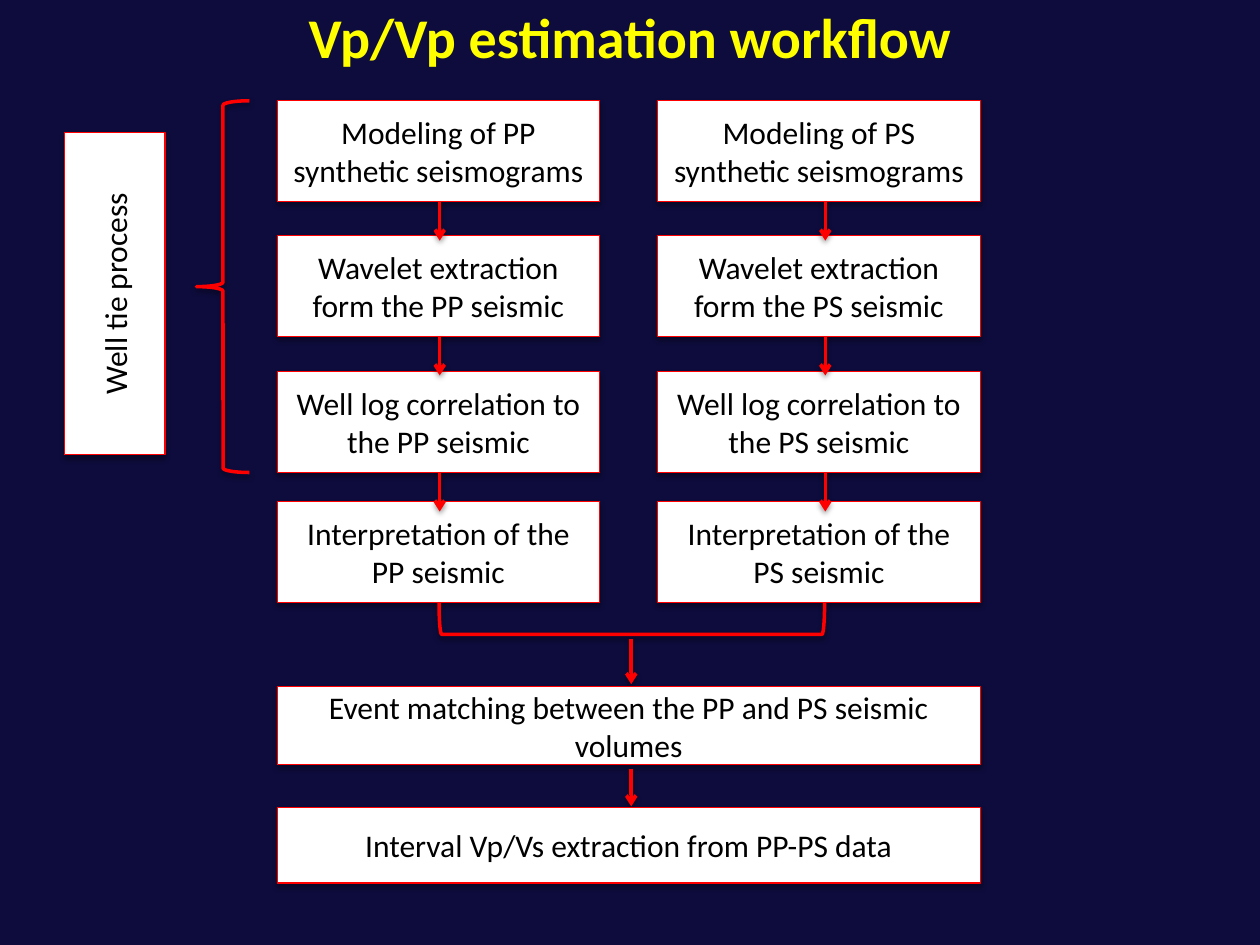
from lxml.etree import SubElement
from pptx import Presentation
from pptx.dml.color import RGBColor
from pptx.enum.shapes import MSO_CONNECTOR, MSO_SHAPE
from pptx.enum.text import MSO_ANCHOR, PP_ALIGN
from pptx.oxml.ns import qn
from pptx.util import Inches, Pt

NAVY = RGBColor(0x0E, 0x0C, 0x3C)
WHITE = RGBColor(0xFF, 0xFF, 0xFF)
BLACK = RGBColor(0, 0, 0)
RED = RGBColor(0xFF, 0, 0)
YELLOW = RGBColor(0xFF, 0xFF, 0)

GRID_COLUMNS, GRID_ROWS = 100, 75
BOX_COLUMNS = (22, 52.2)
BOX_ROWS = (8, 18.7, 29.5, 39.8)
BOX_WIDTH, BOX_HEIGHT = 25.6, 8
ARROW_COLUMNS = (34.9, 65.5)
ARROW_LENGTH = 3.1
MIDDLE = 50.1
WIDE = BOX_COLUMNS[1] + BOX_WIDTH - BOX_COLUMNS[0]

STEPS = (
    "Modeling of {} synthetic seismograms",
    "Wavelet extraction form the {} seismic",
    "Well log correlation to the {} seismic",
    "Interpretation of the {} seismic",
)


def write(sp, text, size=18, color=BLACK, bold=False, font="Calibri"):
    tf = sp.text_frame
    tf.word_wrap = True
    tf.vertical_anchor = MSO_ANCHOR.MIDDLE
    p = tf.paragraphs[0]
    p.alignment = PP_ALIGN.CENTER
    r = p.add_run()
    r.text = text
    r.font.name = font
    r.font.size = Pt(size)
    r.font.bold = bold
    r.font.color.rgb = color


class Workflow:
    box_line, mark_line = 0.75, 2

    def __init__(self, prs):
        self.cell_width = prs.slide_width / GRID_COLUMNS
        self.cell_height = prs.slide_height / GRID_ROWS
        self.s = prs.slides.add_slide(prs.slide_layouts[5])
        self.s.background.fill.solid()
        self.s.background.fill.fore_color.rgb = NAVY

    def place(self, x, y, w, h):
        return (round(x * self.cell_width), round(y * self.cell_height),
                round(w * self.cell_width), round(h * self.cell_height))

    def outline(self, sp, width, alpha, distance):
        sp.line.color.rgb = RED
        sp.line.width = Pt(width)
        effects = SubElement(sp._element.spPr, qn("a:effectLst"))
        shadow = SubElement(effects, qn("a:outerShdw"), blurRad=str(Pt(3.1)),
                            dist=str(Pt(distance)), dir="5400000", rotWithShape="0")
        color = SubElement(shadow, qn("a:srgbClr"), val=str(BLACK))
        SubElement(color, qn("a:alpha"), val=str(alpha * 1000))

    def title(self, text, *area):
        sp = self.s.shapes.title
        sp.left, sp.top, sp.width, sp.height = self.place(*area)
        write(sp, text, size=32, color=YELLOW, bold=True)

    def box(self, text, *area, rotation=0):
        sp = self.s.shapes.add_shape(MSO_SHAPE.RECTANGLE, *self.place(*area))
        sp.rotation = rotation
        sp.fill.solid()
        sp.fill.fore_color.rgb = WHITE
        self.outline(sp, self.box_line, 35, 1.8)
        write(sp, text)

    def bracket(self, kind, *area, rotation=0):
        sp = self.s.shapes.add_shape(kind, *self.place(*area))
        sp.rotation = rotation
        sp.fill.background()
        self.outline(sp, self.mark_line, 38, 1.6)

    def arrow(self, x, y, length):
        ends = self.place(x, y, x, y + length)
        sp = self.s.shapes.add_connector(MSO_CONNECTOR.STRAIGHT, *ends)
        self.outline(sp, self.mark_line, 38, 1.6)
        SubElement(sp.line._get_or_add_ln(), qn("a:tailEnd"), type="arrow")


def main():
    prs = Presentation()
    prs.slide_width, prs.slide_height = Inches(10), Inches(7.5)
    flow = Workflow(prs)
    flow.title("Vp/Vp estimation workflow", 5, -0.7, 90, 7.1)

    for wave, x in zip(("PP", "PS"), BOX_COLUMNS):
        for step, y in zip(STEPS, BOX_ROWS):
            flow.box(step.format(wave), x, y, BOX_WIDTH, BOX_HEIGHT)
    for x in ARROW_COLUMNS:
        for y in BOX_ROWS[:-1]:
            flow.arrow(x, y + BOX_HEIGHT, ARROW_LENGTH)

    flow.bracket(MSO_SHAPE.LEFT_BRACKET, 48.9, 33.8, 2.5, 30.6, rotation=270)
    flow.arrow(MIDDLE, 50.7, 3.6)
    flow.box("Event matching between the PP and PS seismic volumes",
             BOX_COLUMNS[0], 54.5, WIDE, 6.2)
    flow.arrow(MIDDLE, 61, 3)
    flow.box("Interval Vp/Vs extraction from PP-PS data",
             BOX_COLUMNS[0], 64.1, WIDE, 6)

    flow.bracket(MSO_SHAPE.LEFT_BRACE, 15.6, BOX_ROWS[0], 4.2,
                 BOX_ROWS[2] + BOX_HEIGHT - BOX_ROWS[0])
    flow.box("Well tie process", -3.7, 19.3, BOX_WIDTH, BOX_HEIGHT, rotation=270)
    prs.save("out.pptx")


if __name__ == "__main__":
    main()
